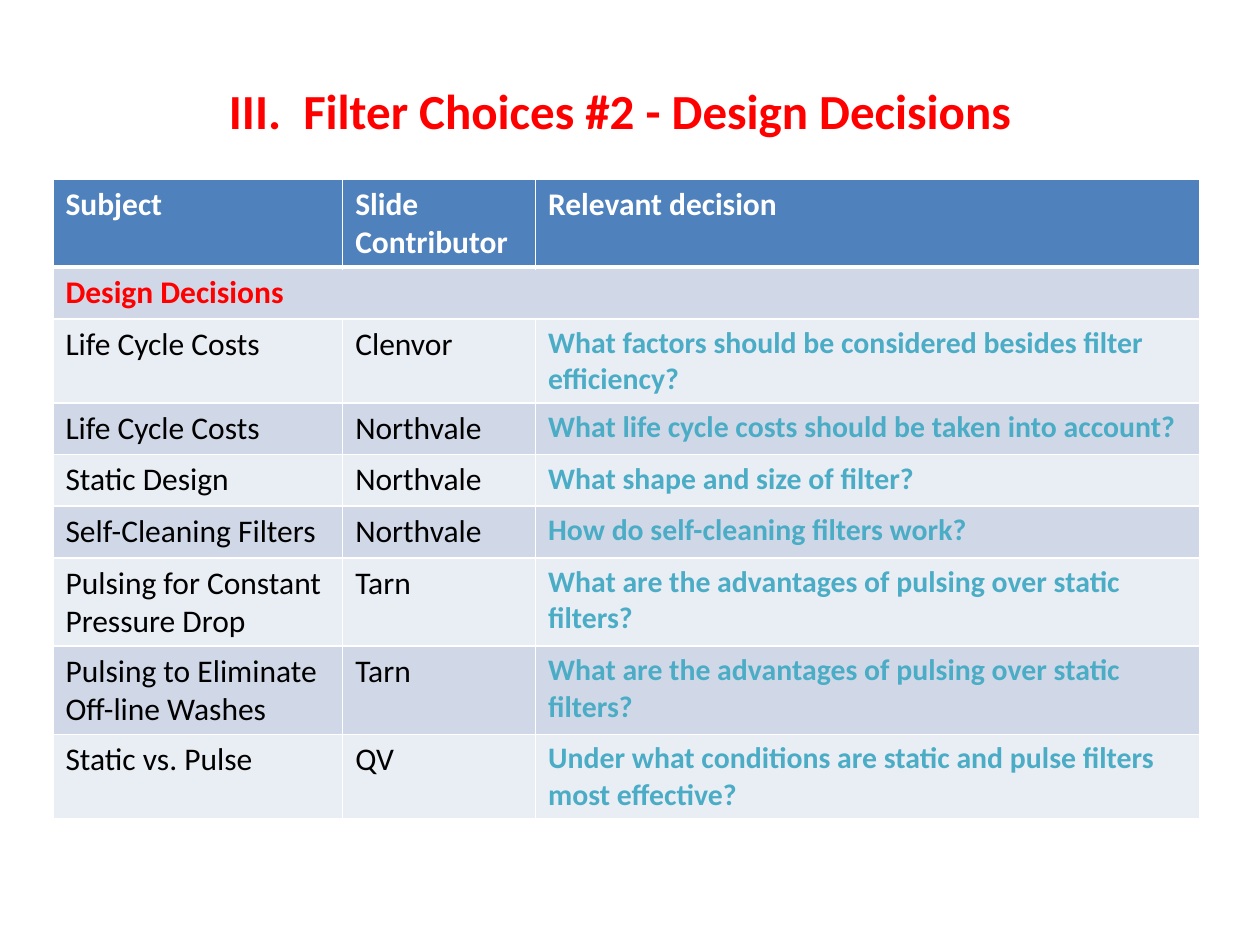
from lxml.etree import SubElement
from pptx import Presentation
from pptx.dml.color import RGBColor
from pptx.enum.text import MSO_ANCHOR, PP_ALIGN
from pptx.oxml.ns import qn
from pptx.util import Inches, Pt

COLORS = {
    "red": "FF0000",
    "white": "FFFFFF",
    "black": "000000",
    "teal": "4BACC6",
    "header": "4F81BD",
    "band_dark": "D0D8E8",
    "band_light": "E9EDF4",
}
FONT = "Calibri"
COLUMN_WIDTHS = [2.3, 1.53, 5.27]
ROW_HEIGHT = 0.41
HEADERS = ["Subject", "Slide Contributor", "Relevant decision"]
SECTION = "Design Decisions"
PULSING_QUESTION = "What are the advantages of pulsing over static filters?"
DECISIONS = [
    ("Life Cycle Costs", "Clenvor", "What factors should be considered besides filter efficiency?"),
    ("Life Cycle Costs", "Northvale", "What life cycle costs should be taken into account?"),
    ("Static Design", "Northvale", "What shape and size of filter?"),
    ("Self-Cleaning Filters", "Northvale", "How do self-cleaning filters work?"),
    ("Pulsing for Constant Pressure Drop", "Tarn", PULSING_QUESTION),
    ("Pulsing to Eliminate Off-line Washes", "Tarn", PULSING_QUESTION),
    ("Static vs. Pulse", "QV", "Under what conditions are static and pulse filters most effective?"),
]


def rgb(name):
    return RGBColor.from_string(COLORS[name])


def write(tf, text, size=18, color="black", bold=False, align=PP_ALIGN.LEFT):
    p = tf.paragraphs[0]
    p.alignment = align
    r = p.add_run()
    r.text = text
    r.font.name = FONT
    r.font.size = Pt(size)
    r.font.bold = bold
    r.font.color.rgb = rgb(color)


def style_cell(cell, fill, top=1, bottom=1):
    tcPr = cell._tc.get_or_add_tcPr()
    for side, width in zip("LRTB", (1, 1, top, bottom)):
        ln = SubElement(tcPr, qn(f"a:ln{side}"), w=str(Pt(width)))
        line_fill = SubElement(ln, qn("a:solidFill"))
        SubElement(line_fill, qn("a:srgbClr"), val=COLORS["white"])
    cell.fill.solid()
    cell.fill.fore_color.rgb = rgb(fill)


def add_title(s, x, y, w, h):
    tf = s.shapes.add_textbox(Inches(x), Inches(y), Inches(w), Inches(h)).text_frame
    tf.word_wrap = True
    tf.vertical_anchor = MSO_ANCHOR.MIDDLE
    write(tf, "III.  Filter Choices #2 - Design Decisions", size=28, color="red",
          bold=True, align=PP_ALIGN.CENTER)


def add_decision_table(s, x, y, w):
    row_count = len(DECISIONS) + 2
    table = s.shapes.add_table(row_count, len(HEADERS), Inches(x), Inches(y),
                               Inches(w), Inches(ROW_HEIGHT * row_count)).table
    for column, width in zip(table.columns, COLUMN_WIDTHS):
        column.width = Inches(w * width / sum(COLUMN_WIDTHS))
    for i, row in enumerate(table.rows):
        row.height = Inches(ROW_HEIGHT)
        fill = "header" if i == 0 else ("band_light", "band_dark")[i % 2]
        for cell in row.cells:
            style_cell(cell, fill, top=3 if i == 1 else 1, bottom=3 if i == 0 else 1)

    for j, header in enumerate(HEADERS):
        write(table.cell(0, j).text_frame, header, color="white", bold=True)
    table.cell(1, 0).merge(table.cell(1, len(HEADERS) - 1))
    write(table.cell(1, 0).text_frame, SECTION, color="red", bold=True)
    for i, (subject, contributor, question) in enumerate(DECISIONS, start=2):
        write(table.cell(i, 0).text_frame, subject)
        write(table.cell(i, 1).text_frame, contributor)
        write(table.cell(i, 2).text_frame, question, size=17, color="teal", bold=True)


def main():
    prs = Presentation()
    prs.slide_width = Inches(10)
    prs.slide_height = Inches(7.5)
    s = prs.slides.add_slide(prs.slide_layouts[6])
    add_title(s, 0.42, 0.25, 9, 1.25)
    add_decision_table(s, 0.42, 1.42, 9.1)
    prs.save("out.pptx")


if __name__ == "__main__":
    main()
